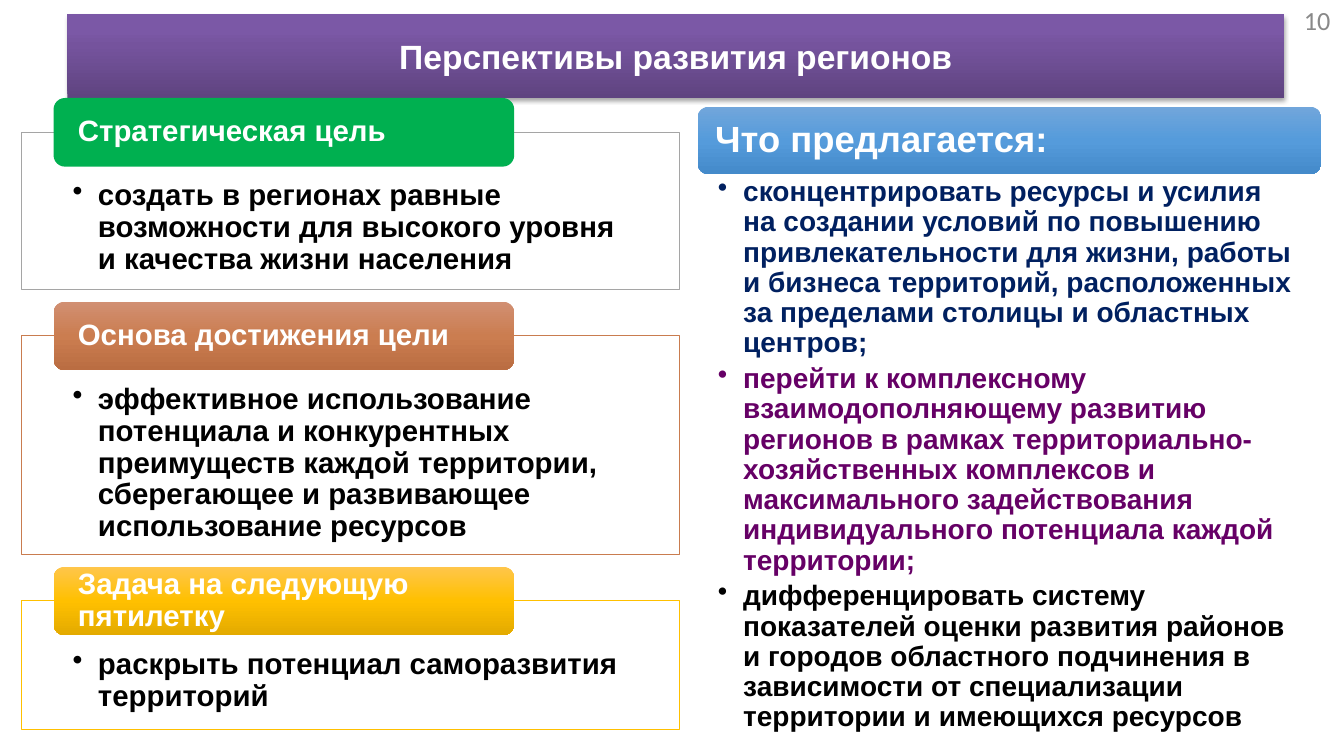
from lxml import etree
from pptx import Presentation
from pptx.dml.color import RGBColor
from pptx.enum import shapes, text
from pptx.oxml import parse_xml
from pptx.oxml.ns import nsdecls, qn
from pptx.util import Cm, Pt


def paint(shape, stops, angle=90):
    """Fill with one hex colour, or with a gradient of (percent, hex) stops."""
    if isinstance(stops, str):
        shape.fill.solid()
        shape.fill.fore_color.rgb = RGBColor.from_string(stops)
        return
    marks = "".join(f'<a:gs pos="{percent * 1000}"><a:srgbClr val="{colour}"/></a:gs>'
                    for percent, colour in stops)
    shape.fill.background()
    no_fill = shape._element.spPr.find(qn("a:noFill"))
    no_fill.getparent().replace(no_fill, parse_xml(
        f'<a:gradFill {nsdecls("a")} rotWithShape="1"><a:gsLst>{marks}</a:gsLst>'
        f'<a:lin ang="{angle * 60000}" scaled="0"/></a:gradFill>'))


def write(shape, paragraphs, size, insets, anchor=text.MSO_ANCHOR.MIDDLE,
          align=text.PP_ALIGN.LEFT, font="Arial", bold=True, bullet=False,
          spacing=0.9, after=0):
    """Write (words, hex colour) paragraphs; insets are left, top, right, bottom in cm."""
    frame = shape.text_frame
    frame.word_wrap = True
    frame.vertical_anchor = anchor
    frame.margin_left, frame.margin_top, frame.margin_right, frame.margin_bottom = map(Cm, insets)
    for index, (words, colour) in enumerate(paragraphs):
        paragraph = frame.add_paragraph() if index else frame.paragraphs[0]
        paragraph.alignment = align
        paragraph.line_spacing = spacing
        paragraph.space_before = Pt(0)
        paragraph.space_after = Pt(after)
        if bullet:
            properties = paragraph._p.get_or_add_pPr()
            properties.set("marL", str(Cm(0.64)))
            properties.set("indent", str(-Cm(0.64)))
            etree.SubElement(properties, qn("a:buChar"), char="•")
        run = paragraph.add_run()
        run.text = words
        run.font.name, run.font.size, run.font.bold = font, Pt(size), bold
        run.font.color.rgb = RGBColor.from_string(colour)


WHITE, BLACK = "FFFFFF", "000000"
RECT, ROUNDED = shapes.MSO_SHAPE.RECTANGLE, shapes.MSO_SHAPE.ROUNDED_RECTANGLE
TOP = text.MSO_ANCHOR.TOP

deck = Presentation()
deck.slide_width, deck.slide_height = Cm(33.87), Cm(19.05)
slide = deck.slides.add_slide(deck.slide_layouts[5])

# Title band
title = slide.shapes.title
title.left, title.top, title.width, title.height = Cm(1.7), Cm(0.36), Cm(30.66), Cm(2.11)
paint(title, [(0, "5F4480"), (63, "75539D"), (80, "7B58A6"), (100, "7C57A8")], 270)
title._element.spPr.append(parse_xml(
    f'<a:effectLst {nsdecls("a")}><a:outerShdw blurRad="{Pt(3.1)}" dist="{Pt(1.8)}" '
    'dir="5400000" rotWithShape="0"><a:srgbClr val="000000"><a:alpha val="35000"/>'
    '</a:srgbClr></a:outerShdw></a:effectLst>'))
write(title, [("Перспективы развития регионов", WHITE)], 24, (0.25, 0.13, 0.25, 0.13),
      align=text.PP_ALIGN.CENTER, spacing=1.0)

page_number = slide.shapes.add_textbox(Cm(25.96), Cm(0), Cm(7.9), Cm(1.02))
write(page_number, [("10", "898989")], 18.7, (0.33, 0.18, 0.33, 0.18),
      align=text.PP_ALIGN.RIGHT, font="Calibri", bold=False, spacing=1.0)

# Left column: framed cards, each with a heading over its top edge
cards = [
    ("Стратегическая цель",
     "создать в регионах равные возможности для высокого уровня и качества жизни населения",
     3.96, "A5A5A5", "00B050"),
    ("Основа достижения цели",
     "эффективное использование потенциала и конкурентных преимуществ каждой территории, "
     "сберегающее и развивающее использование ресурсов",
     5.51, "C97C4F", [(0, "D18F72"), (50, "CB7D50"), (100, "BA6D42")]),
    ("Задача на следующую пятилетку",
     "раскрыть потенциал саморазвития территорий",
     3.23, "FFC000", [(0, "FFC64B"), (50, "FFC000"), (100, "E3AA00")]),
]
card_top = 3.33
for heading, statement, height, edge, heading_fill in cards:
    card = slide.shapes.add_shape(RECT, Cm(0.53), Cm(card_top), Cm(16.59), Cm(height))
    card.shadow.inherit = False
    paint(card, WHITE)
    card.line.color.rgb = RGBColor.from_string(edge)
    card.line.width = Pt(0.5)
    write(card, [(statement, BLACK)], 21, (1.3, 1.22, 1.3, 0.41), TOP, bullet=True)

    label = slide.shapes.add_shape(ROUNDED, Cm(1.35), Cm(card_top - 0.86), Cm(11.61), Cm(1.73))
    label.shadow.inherit = False
    paint(label, heading_fill)
    label.line.fill.background()
    write(label, [(heading, WHITE)], 21, (0.53, 0, 0.53, 0))
    card_top += height + 1.17

# Right column: proposals
proposal_heading = slide.shapes.add_shape(ROUNDED, Cm(17.58), Cm(2.69), Cm(15.72), Cm(1.7))
proposal_heading.shadow.inherit = False
paint(proposal_heading, [(0, "71A6DB"), (50, "559BDB"), (100, "448ACA")])
proposal_heading.line.fill.background()
write(proposal_heading, [("Что предлагается:", WHITE)], 26, (0.36, 0.28, 0.36, 0.28))

proposals = [
    ("сконцентрировать ресурсы и усилия на создании условий по повышению привлекательности "
     "для жизни, работы и бизнеса территорий, расположенных за пределами столицы и областных "
     "центров;", "002060"),
    ("перейти к комплексному взаимодополняющему развитию регионов в рамках "
     "территориально-хозяйственных комплексов и максимального задействования "
     "индивидуального потенциала каждой территории;", "660066"),
    ("дифференцировать систему показателей оценки развития районов и городов областного "
     "подчинения в зависимости от специализации территории и имеющихся ресурсов", BLACK),
]
proposal_list = slide.shapes.add_textbox(Cm(17.58), Cm(4.37), Cm(15.72), Cm(13.74))
write(proposal_list, proposals, 20, (0.51, 0.1, 0.51, 0.1), TOP, bullet=True, after=4)

deck.save("out.pptx")
